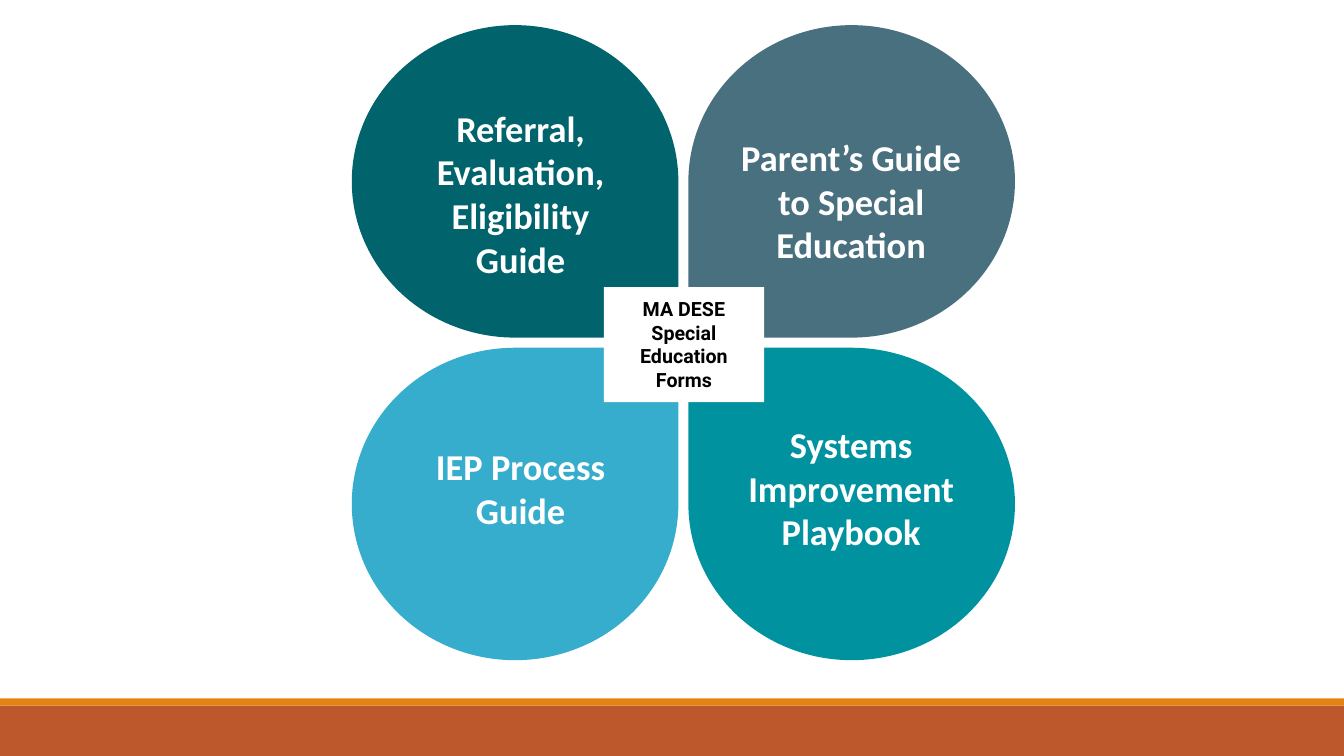
from dataclasses import dataclass

import pptx
import pptx.dml.color
import pptx.enum.shapes
import pptx.enum.text
import pptx.shapes.autoshape
import pptx.slide
import pptx.util

RGBColor = pptx.dml.color.RGBColor
Preset = pptx.enum.shapes.MSO_SHAPE

RUST = RGBColor(0xBD, 0x58, 0x2C)
ORANGE = RGBColor(0xE4, 0x83, 0x12)
PINE = RGBColor(0x01, 0x64, 0x6D)
SLATE = RGBColor(0x49, 0x70, 0x7F)
SKY = RGBColor(0x36, 0xAD, 0xCC)
TEAL = RGBColor(0x01, 0x92, 0xA0)
WHITE = RGBColor(0xFF, 0xFF, 0xFF)
BLACK = RGBColor(0x00, 0x00, 0x00)

# Grid of square cells over the whole slide
COLUMNS, ROWS = 80, 45
CELL = pptx.util.Inches(7.5) / ROWS

# Petals stand two by two, with the same gap both ways
PETAL_LEFT, PETAL_TOP = 20.94, 1.5
PETAL_WIDTH, PETAL_HEIGHT, PETAL_GAP = 19.44, 18.6, 0.6

CAPTION_LEFT, CAPTION_PITCH, CAPTION_WIDTH = 23.52, 19.68, 14.94
CAPTION_LINE, CAPTION_PADDING = 2.63, 0.6


@dataclass(frozen=True)
class Area:
    left: float
    top: float
    width: float
    height: float

    def lengths(self) -> list[pptx.util.Emu]:
        cells = (self.left, self.top, self.width, self.height)
        return [pptx.util.Emu(round(count * CELL)) for count in cells]


@dataclass(frozen=True)
class Petal:
    column: int
    row: int
    color: RGBColor
    caption: str
    caption_top: float
    caption_lines: int


@dataclass(frozen=True)
class Style:
    font: str
    size: int
    color: RGBColor
    inset: float


CAPTION_STYLE = Style("Calibri", 26, WHITE, 0.05)
CENTER_STYLE = Style("Roboto", 14, BLACK, 0.1)

BARS = [
    (Area(0, 42, COLUMNS, 3), RUST),
    (Area(0, 41.58, COLUMNS, 0.42), ORANGE),
]
PETALS = [
    Petal(0, 0, PINE, "Referral, Evaluation, Eligibility Guide", 6, 4),
    Petal(1, 0, SLATE, "Parent’s Guide to Special Education", 7.74, 3),
    Petal(0, 1, SKY, "IEP Process Guide", 26.16, 2),
    Petal(1, 1, TEAL, "Systems Improvement Playbook", 24.84, 3),
]
CENTER = Area(35.94, 17.1, 9.54, 6.84)


def add_filled(page: pptx.slide.Slide, preset: Preset, area: Area,
               color: RGBColor) -> pptx.shapes.autoshape.Shape:
    shape = page.shapes.add_shape(preset, *area.lengths())
    shape.shadow.inherit = False
    shape.fill.solid()
    shape.fill.fore_color.rgb = color
    shape.line.fill.background()
    return shape


def write(box: pptx.shapes.autoshape.Shape, text: str, style: Style) -> None:
    frame = box.text_frame
    frame_format = {
        "word_wrap": True,
        "vertical_anchor": pptx.enum.text.MSO_ANCHOR.TOP,
        "margin_left": pptx.util.Inches(0.1),
        "margin_right": pptx.util.Inches(0.1),
        "margin_top": pptx.util.Inches(style.inset),
        "margin_bottom": pptx.util.Inches(style.inset),
    }
    for name, value in frame_format.items():
        setattr(frame, name, value)
    para = frame.paragraphs[0]
    para.alignment = pptx.enum.text.PP_ALIGN.CENTER
    span = para.add_run()
    span.text = text
    font_format = {"name": style.font, "size": pptx.util.Pt(style.size), "bold": True}
    for name, value in font_format.items():
        setattr(span.font, name, value)
    span.font.color.rgb = style.color


def add_petal(page: pptx.slide.Slide, petal: Petal) -> None:
    area = Area(PETAL_LEFT + petal.column * (PETAL_WIDTH + PETAL_GAP),
                PETAL_TOP + petal.row * (PETAL_HEIGHT + PETAL_GAP),
                PETAL_WIDTH, PETAL_HEIGHT)
    shape = add_filled(page, Preset.TEAR, area, petal.color)
    # A teardrop points up and right; flip it to point at the centre
    frame = shape._element.spPr.xfrm
    frame.set("flipH", str(petal.column))
    frame.set("flipV", str(1 - petal.row))


def add_caption(page: pptx.slide.Slide, petal: Petal) -> None:
    area = Area(CAPTION_LEFT + petal.column * CAPTION_PITCH, petal.caption_top,
                CAPTION_WIDTH, CAPTION_PADDING + petal.caption_lines * CAPTION_LINE)
    write(page.shapes.add_textbox(*area.lengths()), petal.caption, CAPTION_STYLE)


def main() -> None:
    deck = pptx.Presentation()
    deck.slide_width = pptx.util.Emu(round(COLUMNS * CELL))
    deck.slide_height = pptx.util.Emu(round(ROWS * CELL))
    page = deck.slides.add_slide(deck.slide_layouts[6])

    # Footer bars
    for area, color in BARS:
        add_filled(page, Preset.RECTANGLE, area, color)

    # Petals, then the label where they meet
    for petal in PETALS:
        add_petal(page, petal)
    center = add_filled(page, Preset.RECTANGLE, CENTER, WHITE)
    write(center, "MA DESE Special Education Forms", CENTER_STYLE)

    # Captions
    for petal in PETALS:
        add_caption(page, petal)

    deck.save("out.pptx")


if __name__ == "__main__":
    main()
